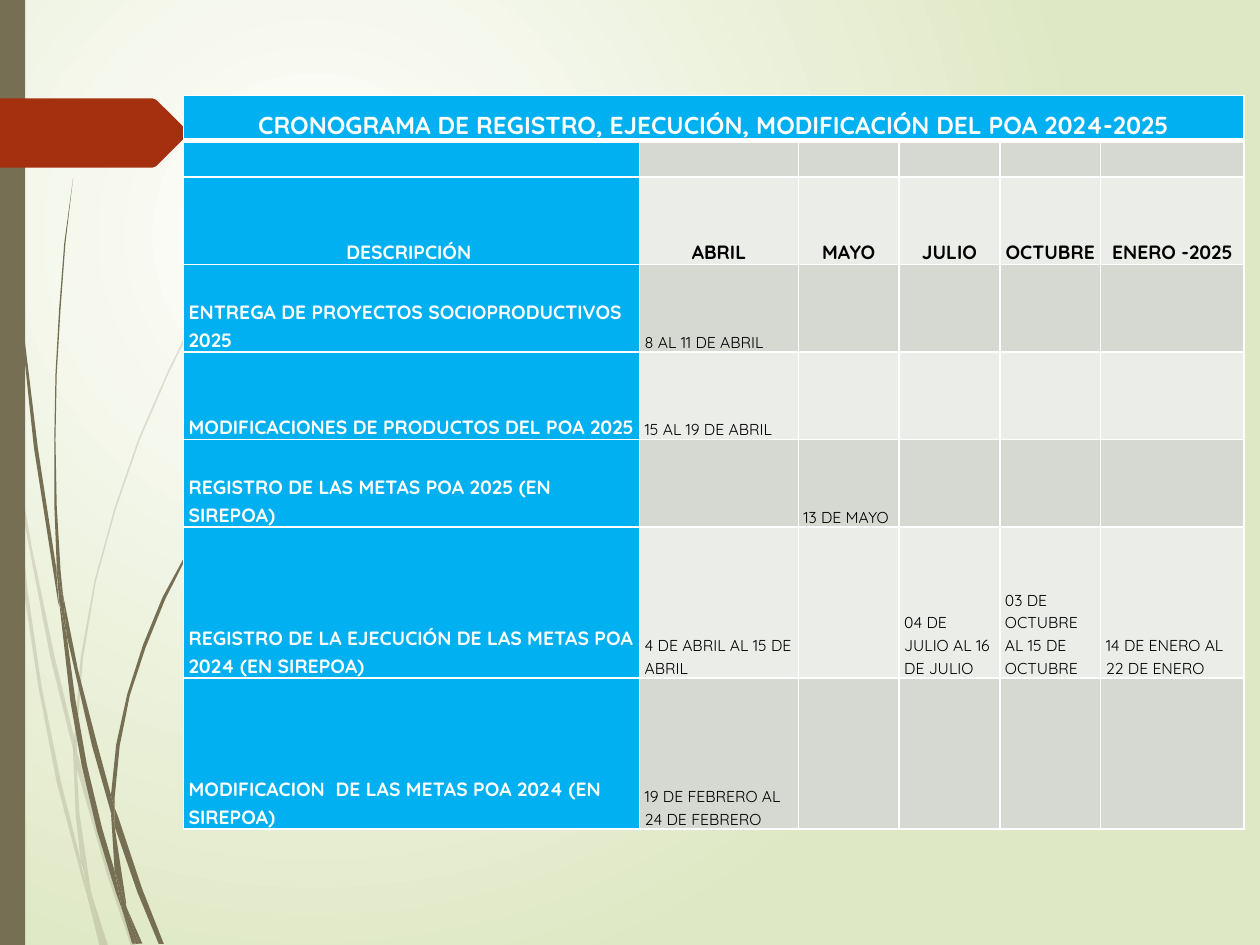
from typing import NamedTuple, Optional

from lxml.etree import SubElement
from pptx import Presentation
from pptx.dml.color import RGBColor
from pptx.enum.shapes import MSO_SHAPE as Preset
from pptx.enum.text import MSO_ANCHOR as Anchor, PP_ALIGN as Align
from pptx.oxml.ns import qn
from pptx.util import Pt

WHITE = RGBColor(0xFF, 0xFF, 0xFF)
BLACK = RGBColor(0x00, 0x00, 0x00)
PALE_GREEN = RGBColor(0xDF, 0xE8, 0xC4)
OLIVE = RGBColor(0x76, 0x6F, 0x54)
RUST = RGBColor(0xA5, 0x30, 0x10)
SKY = RGBColor(0x00, 0xB0, 0xF0)
BAND_DARK = RGBColor(0xD5, 0xD9, 0xD1)
BAND_LIGHT = RGBColor(0xEB, 0xED, 0xE9)
FONT = "Quicksand"

Outline = list[tuple[float, float]]


class TextStyle(NamedTuple):
    size: float
    color: RGBColor
    bold: bool
    align: Align


class Activity(NamedTuple):
    label: str
    dates: dict[int, str]  # month column -> dates
    height: float


TITLE = TextStyle(14, WHITE, True, Align.CENTER)
LABEL_HEAD = TextStyle(11, WHITE, True, Align.CENTER)
MONTH_HEAD = TextStyle(11, BLACK, True, Align.CENTER)
LABEL = TextStyle(11, WHITE, True, Align.LEFT)
DATES = TextStyle(9, BLACK, False, Align.LEFT)

# Grass outlines, in points
FAINT_BLADES: list[Outline] = [
    [(28.8, 375.8), (42.5, 431.3), (42.5, 421.9), (31, 374.4), (18, 311.8), (7.2, 248.4),
     (8.6, 270.7)],
    [(46.1, 437), (43.9, 429.1), (43.9, 439.2), (61.2, 499.7), (74.9, 540.7),
     (77.8, 540.7), (63.4, 498.2)],
    [(59.8, 540.7), (61.9, 540.7), (52.6, 511.9)],
    [(46.1, 491.8), (34.6, 445.7), (23.8, 392.4), (15.8, 337.7), (8.6, 270.7),
     (5.8, 252), (8.9, 295.2), (13.7, 338.4), (22, 393.1), (32.4, 447.1), (46.1, 499),
     (50.4, 514.1), (49.7, 509)],
    [(41.8, 431.3), (43.2, 465.1), (46.1, 491.8), (48.2, 498.2), (52.6, 511.9),
     (51.8, 508.3), (45.4, 465.1), (43.9, 439.2), (43.9, 437.8)],
    [(43.9, 420.5), (47.5, 375.8), (54.7, 332.6), (66.2, 290.9), (79.9, 251.3),
     (96.5, 213.1), (114.5, 176.4), (134.6, 142.6), (144.7, 126), (156.2, 110.9),
     (156.2, 110.2), (144.7, 126), (133.9, 141.8), (113.8, 175.7), (95.8, 212.4),
     (79.2, 250.6), (65.5, 290.2), (54, 331.9), (46.1, 375.8), (42.5, 420.5),
     (42.5, 421.9), (43.9, 429.1)],
    [(50.4, 514.1), (56.9, 540.7), (59, 540.7)],
    [(43.9, 437.8), (43.9, 439.2), (43.9, 429.1), (42.5, 421.9), (41.8, 431.3)],
    [(48.2, 498.2), (46.8, 491.8), (49.7, 509), (50.4, 514.1), (59, 540.7),
     (59.8, 540.7), (52.6, 511.9)],
]
SOLID_BLADES: list[Outline] = [
    [(3.6, 79.2), (10.1, 167.8), (19.4, 255.6), (33.1, 343.4), (33.8, 346.3), (32.4, 329),
     (32.4, 326.2), (21.6, 255.6), (10.8, 167), (4.3, 78.5), (2.9, 34.6), (2.2, 0),
     (1.4, 0), (2.2, 34.6)],
    [(52.6, 426.2), (63.4, 464.4), (63.4, 455.8), (63.4, 454.3), (55.4, 424.8),
     (44.6, 383), (36, 339.8), (38.2, 363.6)],
    [(67.7, 467.3), (65.5, 461.5), (65.5, 472.3), (78.5, 509.8), (90.7, 539.3),
     (93.6, 539.3), (81.4, 508.3)],
    [(65.5, 497.5), (58.3, 473), (49.7, 437), (43.2, 400.3), (38.2, 363.6), (33.8, 343.4),
     (40.3, 401), (46.8, 437.8), (55.4, 474.5), (66.2, 509.8), (69.8, 519.8),
     (69.1, 516.2)],
    [(36, 339.8), (34.6, 326.2), (32.4, 288.7), (31.7, 251.3), (32.4, 213.8),
     (34.6, 176.4), (37.4, 139), (41.8, 101.5), (36.7, 139), (33.8, 176.4), (31.7, 213.8),
     (31, 251.3), (31, 288), (32.4, 323.3), (35.3, 339.8)],
    [(79.2, 539.3), (81.4, 539.3), (72, 517.7)],
    [(33.8, 343.4), (38.2, 363.6), (36, 339.8), (35.3, 339.8), (32.4, 323.3),
     (32.4, 326.2)],
    [(65.5, 455.8), (68.4, 426.2), (74.2, 397.4), (83.2, 370.1), (94.3, 342.7),
     (107.3, 316.8), (121.7, 292.3), (137.5, 269.3), (146.2, 258.5), (155.5, 247.7),
     (154.8, 247.7), (146.2, 257.8), (137.5, 268.6), (121, 291.6), (106.6, 316.1),
     (92.9, 341.3), (81.7, 368.6), (72.7, 396.7), (66.4, 425.5), (63.4, 454.3),
     (65.5, 461.5)],
    [(69.8, 519.8), (75.6, 539.3), (77.8, 539.3)],
    [(63.4, 464.4), (65.5, 497.5), (69.1, 508.3), (72, 517.7), (72, 515.5), (65.5, 472.3),
     (64.8, 468.7)],
    [(63.4, 464.4), (64.8, 468.7), (65.5, 472.3), (65.5, 461.5), (63.4, 454.3),
     (63.4, 455.8)],
    [(69.1, 508.3), (65.5, 497.5), (69.1, 516.2), (69.8, 519.8), (77.8, 539.3),
     (79.2, 539.3), (72, 517.7)],
]
TAG: Outline = [(0, 56.2), (87.1, 56.2), (89.3, 57), (107.3, 74.9), (107.6, 76),
                (107.3, 77), (89.3, 95), (87.1, 95.8), (0, 95.8)]

# Schedule content
HEADING = "CRONOGRAMA DE REGISTRO, EJECUCIÓN, MODIFICACIÓN DEL POA 2024-2025"
MONTHS = dict(enumerate(["ABRIL", "MAYO", "JULIO", "OCTUBRE", "ENERO -2025"], 1))
COLUMN_WIDTHS = [260.6, 90.7, 57.6, 57.6, 57.6, 82]
HEADING_HEIGHT = 25.4
ACTIVITIES = [
    Activity("", {}, 21.2),
    Activity("DESCRIPCIÓN ", MONTHS, 50),
    Activity("ENTREGA DE PROYECTOS SOCIOPRODUCTIVOS 2025", {1: "8 AL 11 DE ABRIL"}, 50),
    Activity("MODIFICACIONES DE PRODUCTOS DEL POA 2025", {1: "15 AL 19 DE ABRIL"}, 50),
    Activity("REGISTRO DE LAS METAS POA 2025 (EN SIREPOA)", {2: "13 DE MAYO"}, 50),
    Activity("REGISTRO DE LA EJECUCIÓN DE LAS METAS POA 2024 (EN SIREPOA)",
             {1: "4 DE ABRIL AL 15 DE ABRIL", 3: "04 DE JULIO AL 16 DE JULIO",
              4: "03 DE OCTUBRE AL 15 DE OCTUBRE", 5: "14 DE ENERO AL 22 DE ENERO"}, 86.3),
    Activity("MODIFICACION  DE LAS METAS POA 2024 (EN SIREPOA)",
             {1: "19 DE FEBRERO AL 24 DE FEBRERO"}, 86.3),
]


def paint(shape, color: RGBColor, opacity: Optional[int] = None) -> None:
    shape.shadow.inherit = False
    shape.fill.solid()
    shape.fill.fore_color.rgb = color
    shape.line.fill.background()
    if opacity is not None:
        tint = shape.element.spPr.find(qn("a:solidFill"))[0]
        SubElement(tint, qn("a:alpha"), val=str(opacity * 1000))


def draw_outline(slide, outline: Outline, color: RGBColor,
                 opacity: Optional[int] = None) -> None:
    start, *rest = [(Pt(x), Pt(y)) for x, y in outline]
    builder = slide.shapes.build_freeform(*start)
    builder.add_line_segments(rest, close=True)
    paint(builder.convert_to_shape(), color, opacity)


def draw_background(slide) -> None:
    fill = slide.background.fill
    fill.gradient()
    for stop, color in zip(fill.gradient_stops, (WHITE, PALE_GREEN)):
        stop.color.rgb = color
    linear = slide.element.find(".//" + qn("a:lin"))
    gradient = linear.getparent()
    gradient.remove(linear)
    circle = SubElement(gradient, qn("a:path"), path="circle")
    SubElement(circle, qn("a:fillToRect"), l="50000", t="50000", r="100000", b="100000")


def style_cell(cell, color: RGBColor, text: str, style: TextStyle,
               top: float = 1, bottom: float = 1) -> None:
    cell.margin_left = cell.margin_right = Pt(2.9)
    cell.margin_top = cell.margin_bottom = 0
    cell.vertical_anchor = Anchor.BOTTOM
    # Borders come before the fill
    properties = cell._tc.get_or_add_tcPr()
    for side, width in (("L", 1), ("R", 1), ("T", top), ("B", bottom)):
        border = SubElement(properties, qn(f"a:ln{side}"), w=str(Pt(width)))
        SubElement(SubElement(border, qn("a:solidFill")), qn("a:srgbClr"), val=str(WHITE))
    cell.fill.solid()
    cell.fill.fore_color.rgb = color
    paragraph = cell.text_frame.paragraphs[0]
    paragraph.alignment = style.align
    paragraph.line_spacing = 1.15
    if not text:
        SubElement(paragraph._p, qn("a:endParaRPr"), sz=str(int(style.size * 100)))
        return
    run = paragraph.add_run()
    run.text = text
    run.font.name = FONT
    run.font.size = Pt(style.size)
    run.font.bold = style.bold
    run.font.color.rgb = style.color


def draw_schedule(slide) -> None:
    heights = [HEADING_HEIGHT] + [activity.height for activity in ACTIVITIES]
    schedule = slide.shapes.add_table(
        len(heights), len(COLUMN_WIDTHS), Pt(104.9), Pt(54.7),
        Pt(sum(COLUMN_WIDTHS)), Pt(sum(heights))).table
    schedule.first_row = schedule.horz_banding = False
    for column, width in zip(schedule.columns, COLUMN_WIDTHS):
        column.width = Pt(width)
    for row, height in zip(schedule.rows, heights):
        row.height = Pt(height)

    # Heading across all columns
    schedule.cell(0, 0).merge(schedule.cell(0, len(COLUMN_WIDTHS) - 1))
    for column in range(len(COLUMN_WIDTHS)):
        style_cell(schedule.cell(0, column), SKY, "" if column else HEADING, TITLE, bottom=3)

    # Months and activities
    for row, activity in enumerate(ACTIVITIES, 1):
        is_header = activity.dates is MONTHS
        top = 3 if row == 1 else 1
        label_style = LABEL_HEAD if is_header else LABEL
        style_cell(schedule.cell(row, 0), SKY, activity.label, label_style, top)
        band = BAND_DARK if row % 2 else BAND_LIGHT
        date_style = MONTH_HEAD if is_header else DATES
        for column in MONTHS:
            style_cell(schedule.cell(row, column), band,
                       activity.dates.get(column, ""), date_style, top)


def main() -> None:
    deck = Presentation()
    deck.slide_width, deck.slide_height = Pt(720), Pt(540)
    slide = deck.slides.add_slide(deck.slide_layouts[6])
    draw_background(slide)
    # Grass, side bar and tag
    for blade in FAINT_BLADES:
        draw_outline(slide, blade, OLIVE, 20)
    for blade in SOLID_BLADES:
        draw_outline(slide, blade, OLIVE)
    side_bar = slide.shapes.add_shape(Preset.RECTANGLE, 0, 0, Pt(14.4), Pt(540))
    paint(side_bar, OLIVE)
    draw_outline(slide, TAG, RUST)
    draw_schedule(slide)
    deck.save("out.pptx")


if __name__ == "__main__":
    main()
